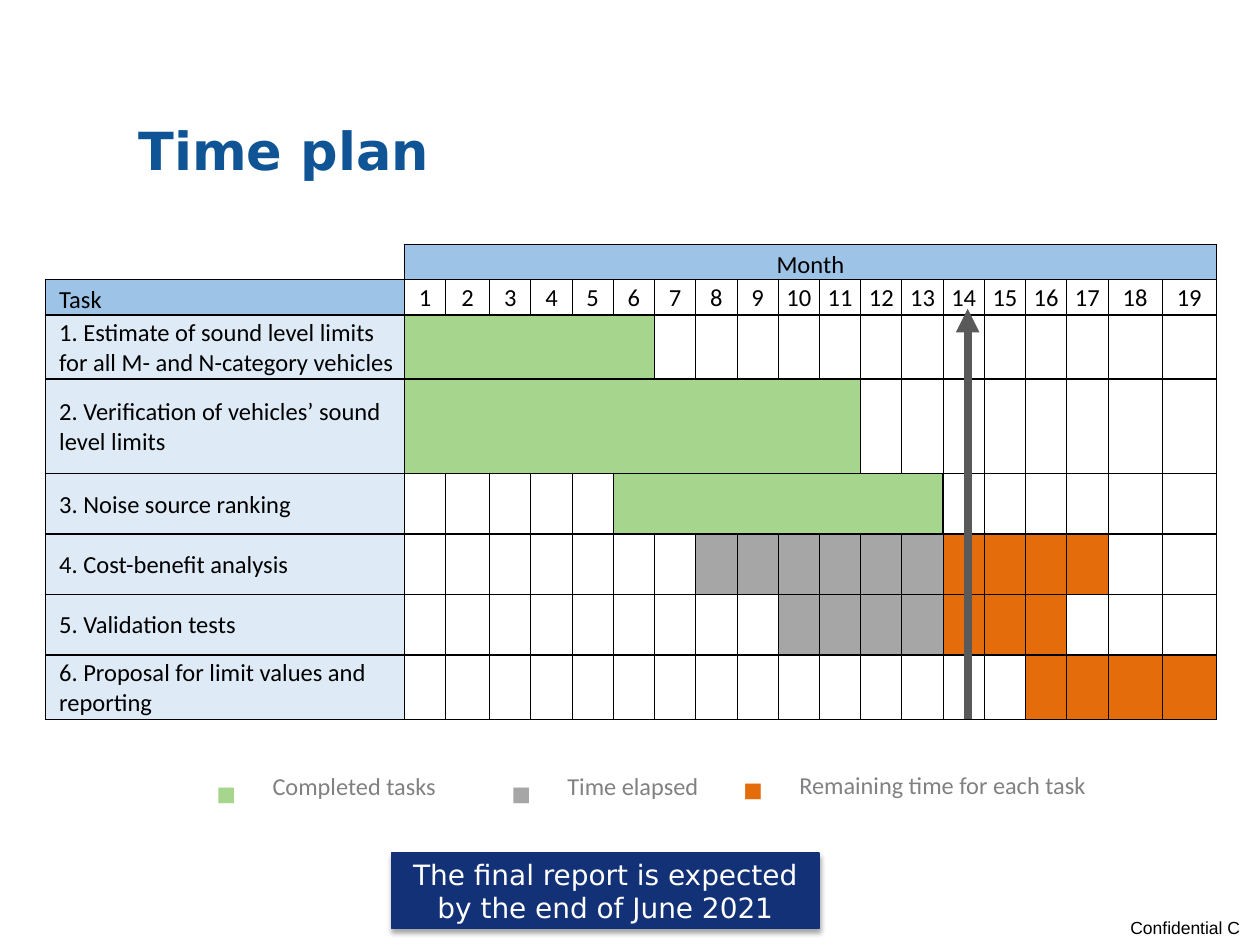
import pptx
import pptx.util
import pptx.dml.color
import pptx.enum.shapes
import pptx.enum.text
import pptx.oxml
import pptx.oxml.ns

Inches, Pt = pptx.util.Inches, pptx.util.Pt
RGB = pptx.dml.color.RGBColor.from_string
ALIGN, ANCHOR = pptx.enum.text.PP_ALIGN, pptx.enum.text.MSO_ANCHOR

THEME = {
    "title": "0F5494", "callout": "133176", "white": "FFFFFF", "black": "000000",
    "header": "9DC3E6", "task": "DEEBF7", "legend": "818083", "today": "595959",
    "completed": "A6D58D", "elapsed": "A6A6A6", "remaining": "E46C0A",
    "title_size": 30, "legend_size": 24, "callout_size": 16,
    "table_size": 14, "footer_size": 10,
    "heading_font": "DejaVu Sans", "body_font": "Calibri", "footer_font": "Arial",
}


def add_xml(parent, xml):
    """Append a DrawingML fragment whose root tag carries the a: prefix."""
    tag, rest = xml[:xml.index(" ")], xml[xml.index(" "):]
    parent.append(pptx.oxml.parse_xml(f"{tag} {pptx.oxml.ns.nsdecls('a')}{rest}"))


def add_run(paragraph, text, font, size, color, bold=False):
    run = paragraph.add_run()
    run.text = text
    run.font.name, run.font.size, run.font.bold = font, Pt(THEME[size]), bold
    run.font.color.rgb = RGB(THEME[color])
    return run


deck = pptx.Presentation()
deck.slide_width, deck.slide_height = Inches(10), Inches(7.5)
slide = deck.slides.add_slide(deck.slide_layouts[5])

# Title
title = slide.shapes.title
title.left, title.top, title.width, title.height = Inches(1), Inches(0.68), Inches(9), Inches(1.02)
title.text_frame.vertical_anchor = ANCHOR.MIDDLE
heading = title.text_frame.paragraphs[0]
heading.alignment = ALIGN.LEFT
add_run(heading, "Time plan", THEME["heading_font"], "title_size", "title", bold=True)

# Confidentiality mark
mark = slide.shapes.add_textbox(Inches(8.82), Inches(7.23), Inches(1.02), Inches(0.27)).text_frame
mark.margin_left = mark.margin_right = mark.margin_top = mark.margin_bottom = 0
mark.vertical_anchor = ANCHOR.MIDDLE
mark.word_wrap = True
mark.paragraphs[0].alignment = ALIGN.RIGHT
add_run(mark.paragraphs[0], "Confidential C", THEME["footer_font"], "footer_size", "black")

# Callout
callout = slide.shapes.add_shape(pptx.enum.shapes.MSO_SHAPE.RECTANGLE,
                                 Inches(3.11), Inches(6.77), Inches(3.39), Inches(0.6))
callout.fill.solid()
callout.fill.fore_color.rgb = RGB(THEME["callout"])
callout.line.color.rgb = RGB(THEME["callout"])
callout.line.width = Pt(0.75)
add_xml(callout._element.spPr,
        f'<a:effectLst ><a:outerShdw blurRad="{Pt(3.1)}" dist="{Pt(1.8)}" dir="5400000" rotWithShape="0">'
        f'<a:srgbClr val="{THEME["black"]}"><a:alpha val="35000"/></a:srgbClr></a:outerShdw></a:effectLst>')
callout.text_frame.word_wrap = True
callout.text_frame.vertical_anchor = ANCHOR.MIDDLE
callout.text_frame.paragraphs[0].alignment = ALIGN.CENTER
add_run(callout.text_frame.paragraphs[0], "The final report is expected by the end of June 2021",
        THEME["heading_font"], "callout_size", "white")

# Schedule: each task with its (status, first month, last month) bars
TASKS = [
    ("1. Estimate of sound level limits for all M- and N-category vehicles", [("completed", 1, 6)]),
    ("2. Verification of vehicles’ sound level limits", [("completed", 1, 11)]),
    ("3. Noise source ranking", [("completed", 6, 13)]),
    ("4. Cost-benefit analysis", [("elapsed", 8, 13), ("remaining", 14, 17)]),
    ("5. Validation tests", [("elapsed", 10, 13), ("remaining", 14, 16)]),
    ("6. Proposal for limit values and reporting", [("remaining", 16, 19)]),
]
row_heights = [0.28, 0.28, 0.51, 0.75, 0.48, 0.48, 0.48, 0.51]
usual_month = 5.24 / 16
column_widths = [2.85, usual_month, 0.12, 0.14, 0.09] + [usual_month] * 15 + [0.43, 0.43]
# Month 2 takes three columns
month_of_column = [0, 1, 2, 2] + list(range(2, 20))
last_column = len(column_widths) - 1

schedule = slide.shapes.add_table(len(row_heights), len(column_widths), Inches(0.36), Inches(1.94),
                                  Inches(9.31), Inches(3.76)).table
schedule.first_row = schedule.horz_banding = False
for row, height in zip(schedule.rows, row_heights):
    row.height = Inches(height)
for column, width in zip(schedule.columns, column_widths):
    column.width = Inches(width)

texts = {(0, 1): "Month", (1, 0): "Task"}
fills = {(0, c): "header" for c in range(1, last_column + 1)}
fills[1, 0] = "header"
for c, month in enumerate(month_of_column):
    if month and month != month_of_column[c - 1]:
        texts[1, c] = str(month)
for r, (task, bars) in enumerate(TASKS, start=2):
    texts[r, 0], fills[r, 0] = task, "task"
    for status, first, last in bars:
        for c, month in enumerate(month_of_column):
            if first <= month <= last:
                fills[r, c] = status

# Merged cells: month heading, month 2, the first task's bar, month 2 in the second task's bar
for r, first, last in [(0, 1, last_column), (1, 2, 4), (2, 1, 8), (3, 2, 4)]:
    schedule.cell(r, first).merge(schedule.cell(r, last))

for r in range(len(row_heights)):
    for c in range(last_column + 1):
        cell = schedule.cell(r, c)
        cell.margin_left = cell.margin_right = cell.margin_top = Inches(0.01)
        cell.margin_bottom = 0
        is_heading = texts.get((r, c)) in ("Month", "Task")
        cell.vertical_anchor = ANCHOR.BOTTOM if is_heading else ANCHOR.MIDDLE
        line = cell.text_frame.paragraphs[0]
        if (r, c) in texts:
            add_run(line, texts[r, c], THEME["body_font"], "table_size", "black")
        else:
            add_xml(line._p, f'<a:endParaRPr sz="{THEME["table_size"] * 100}"/>')
        if c == 0:
            line._p.get_or_add_pPr().set("marL", str(Inches(0.1)))
        else:
            line.alignment = ALIGN.CENTER

        # No line inside a month or a completed bar, thin between months, stronger elsewhere
        sides = {}
        for side, left in (("lnL", c - 1), ("lnR", c)):
            if left in (-1, 0, last_column):
                sides[side] = 1
            elif month_of_column[left] == month_of_column[left + 1]:
                sides[side] = 0
            else:
                status_pair = [fills.get((r, left)), fills.get((r, left + 1))]
                if status_pair == ["completed", "completed"]:
                    sides[side] = 0
                else:
                    sides[side] = 1 if r == 4 and "completed" in status_pair else 0.5
        sides["lnT"] = 0.5 if r == 1 and c else 1
        sides["lnB"] = 0.5 if r == 0 and c else 1
        if (r, c) == (0, 0):
            sides["lnL"] = sides["lnT"] = 0
        for side, width in sides.items():
            paint = f'<a:solidFill><a:srgbClr val="{THEME["black"]}"/></a:solidFill>' if width else "<a:noFill/>"
            add_xml(cell._tc.get_or_add_tcPr(), f'<a:{side} w="{Pt(width)}">{paint}</a:{side}>')
        if (r, c) in fills:
            cell.fill.solid()
            cell.fill.fore_color.rgb = RGB(THEME[fills[r, c]])
        else:
            cell.fill.background()

# Arrow at the current month
today = slide.shapes.add_connector(pptx.enum.shapes.MSO_CONNECTOR.STRAIGHT,
                                   Inches(7.68), Inches(5.71), Inches(7.68), Inches(2.45))
today.line.color.rgb = RGB(THEME["today"])
today.line.width = Pt(4.5)
add_xml(today.line._get_or_add_ln(), '<a:tailEnd type="triangle"/>')
add_xml(today._element.spPr, "<a:effectLst />")

# Legend
for label, status, left, top, width, height, raised in [
    ("Completed tasks", "completed", 1.61, 6.05, 2.34, 0.41, 35),
    ("Time elapsed", "elapsed", 3.95, 6.05, 2.34, 0.41, 35),
    ("Remaining time for each task", "remaining", 5.79, 6.02, 3.57, 0.44, 30),
]:
    entry = slide.shapes.add_textbox(Inches(left), Inches(top), Inches(width), Inches(height)).text_frame
    entry.word_wrap = True
    line = entry.paragraphs[0]
    line.space_before = Pt(5)
    props = line._p.get_or_add_pPr()
    props.set("marL", str(Inches(0.38)))
    props.set("indent", str(Inches(-0.38)))
    add_xml(props, f'<a:buClr ><a:srgbClr val="{THEME[status]}"/></a:buClr>')
    add_xml(props, '<a:buSzPct val="150000"/>')
    add_xml(props, f'<a:buFont typeface="{THEME["footer_font"]}"/>')
    add_xml(props, '<a:buChar char="▪"/>')
    add_run(line, " ", THEME["body_font"], "legend_size", "legend")
    name = add_run(line, label, THEME["body_font"], "legend_size", "legend")
    name.font._element.set("baseline", str(raised * 1000))

deck.save("out.pptx")
